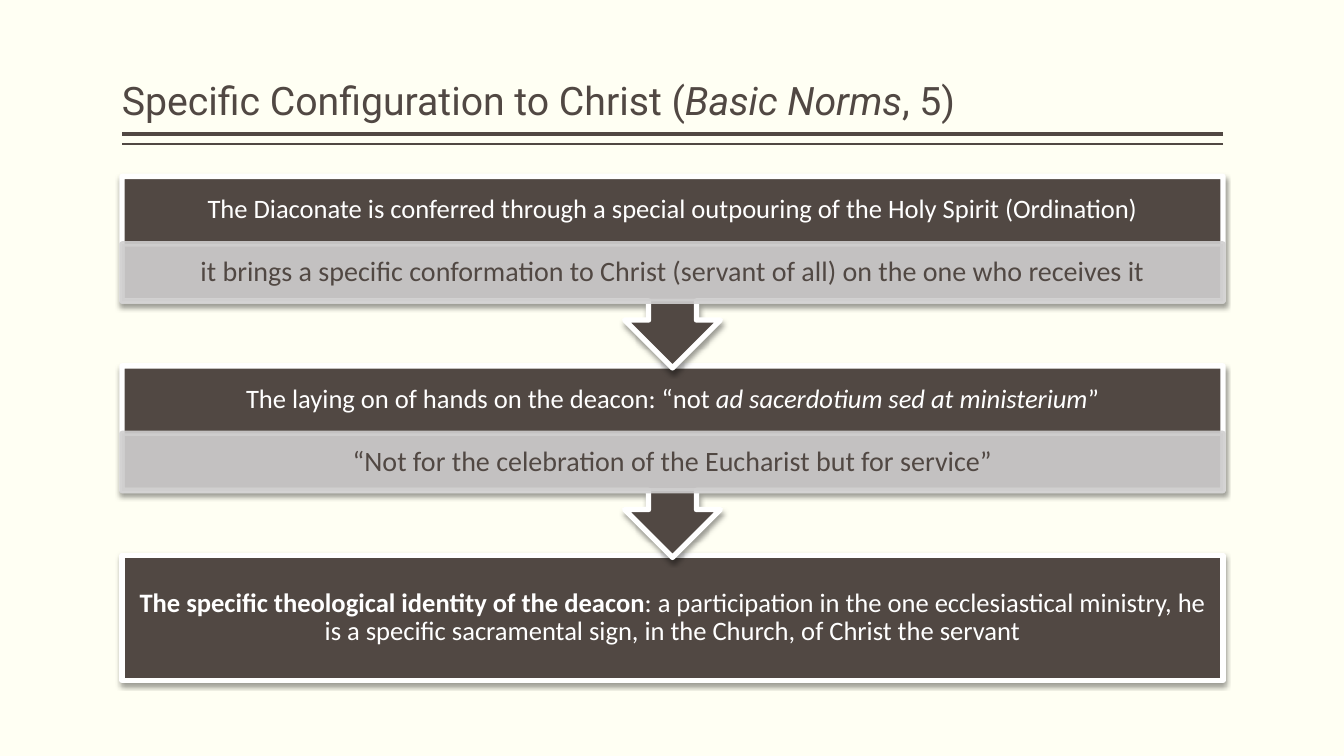
from lxml.etree import SubElement
from pptx import Presentation
from pptx.dml.color import RGBColor
from pptx.enum.shapes import MSO_CONNECTOR as Connector, MSO_SHAPE as Shape
from pptx.enum.text import MSO_ANCHOR as Anchor, PP_ALIGN as Align
from pptx.oxml.ns import qn
from pptx.util import Inches, Pt

BROWN, GREY, WHITE, CREAM = "514843", "D0CFCF", "FFFFFF", "FFFFF3"
TITLE = [("Specific Configuration to Christ (", ""), ("Basic Norms", "i"), (", 5)", "")]
STEPS = [
    ([("The Diaconate is conferred through a special outpouring of the Holy Spirit (Ordination)", "")],
     [("it brings a specific conformation to Christ (servant of all) on the one who receives it", "")]),
    ([("The laying on of hands on the deacon: “not ", ""),
      ("ad sacerdotium sed at ministerium", "i"), ("”", "")],
     [("“Not for the celebration of the Eucharist but for service”", "")]),
]
CONCLUSION = [
    ("The specific theological identity of the deacon", "b"),
    (": a participation in the one ecclesiastical ministry, he is a specific "
     "sacramental sign, in the Church, of Christ the servant", ""),
]
RULES = [(1.33, 3), (1.43, 1)]
LEFT, WIDTH = 1.21, 10.92
TOP, PITCH = 1.75, 1.88
CALLOUT_HEIGHT, HEAD_HEIGHT, DETAIL_HEIGHT, CONCLUSION_HEIGHT = 1.9, 0.67, 0.57, 1.24


def color(code):
    return RGBColor.from_string(code)


def add_effects(shape, shadowed):
    effects = SubElement(shape._element.spPr, qn("a:effectLst"))
    if shadowed:
        shadow = SubElement(effects, qn("a:outerShdw"), blurRad=str(Pt(3.5)), dist=str(Pt(2)),
                            dir="5400000", algn="ctr", rotWithShape="0")
        black = SubElement(shadow, qn("a:srgbClr"), val="000000")
        SubElement(black, qn("a:alpha"), val="38000")


def add_block(page, kind, top, height, fill, line, shadowed=True):
    block = page.shapes.add_shape(kind, Inches(LEFT), Inches(top), Inches(WIDTH), Inches(height))
    block.fill.solid()
    block.fill.fore_color.rgb = color(fill)
    block.line.color.rgb = color(line)
    block.line.width = Pt(3.8)
    add_effects(block, shadowed)
    return block


def add_text_box(page, top, height):
    return page.shapes.add_textbox(Inches(LEFT), Inches(top), Inches(WIDTH), Inches(height))


def write(box, spans, size, ink, insets, font="Calibri", align=Align.CENTER, anchor=Anchor.MIDDLE):
    frame = box.text_frame
    frame.word_wrap = True
    frame.vertical_anchor = anchor
    frame.margin_left = frame.margin_right = Inches(insets[0])
    frame.margin_top = frame.margin_bottom = Inches(insets[1])
    para = frame.paragraphs[0]
    para.alignment = align
    para.line_spacing = 0.9
    for text, style in spans:
        span = para.add_run()
        span.text = text
        span.font.name = font
        span.font.size = Pt(size)
        span.font.color.rgb = color(ink)
        span.font.bold = style == "b"
        span.font.italic = style == "i"


def add_step(page, top, heading, detail):
    callout = add_block(page, Shape.UP_ARROW_CALLOUT, top, CALLOUT_HEIGHT, BROWN, WHITE)
    callout.rotation = 180
    write(add_text_box(page, top, HEAD_HEIGHT), heading, 19, WHITE, (0.15, 0.15))
    band = add_block(page, Shape.RECTANGLE, top + HEAD_HEIGHT, DETAIL_HEIGHT, GREY, GREY, False)
    for tint in band._element.spPr.iter(qn("a:srgbClr")):
        SubElement(tint, qn("a:alpha"), val="90000")
    write(band, detail, 20, BROWN, (0.16, 0.03))


def main():
    """Build the slide on the deacon's configuration to Christ."""
    deck = Presentation()
    deck.slide_width, deck.slide_height = Inches(13.33), Inches(7.5)
    page = deck.slides.add_slide(deck.slide_layouts[6])
    page.background.fill.solid()
    page.background.fill.fore_color.rgb = color(CREAM)

    for height, weight in RULES:
        rule = page.shapes.add_connector(Connector.STRAIGHT, Inches(LEFT + WIDTH), Inches(height),
                                         Inches(LEFT), Inches(height))
        rule.line.color.rgb = color(BROWN)
        rule.line.width = Pt(weight)
        add_effects(rule, False)
    write(add_text_box(page, 0.08, 1.2), TITLE, 28, BROWN, (0, 0.05),
          "Roboto", Align.LEFT, Anchor.BOTTOM)

    conclusion = add_block(page, Shape.RECTANGLE, TOP + PITCH * len(STEPS), CONCLUSION_HEIGHT,
                           BROWN, WHITE)
    write(conclusion, CONCLUSION, 19, WHITE, (0.15, 0.15))
    for index, (heading, detail) in reversed(list(enumerate(STEPS))):
        add_step(page, TOP + PITCH * index, heading, detail)
    deck.save("out.pptx")


if __name__ == "__main__":
    main()
